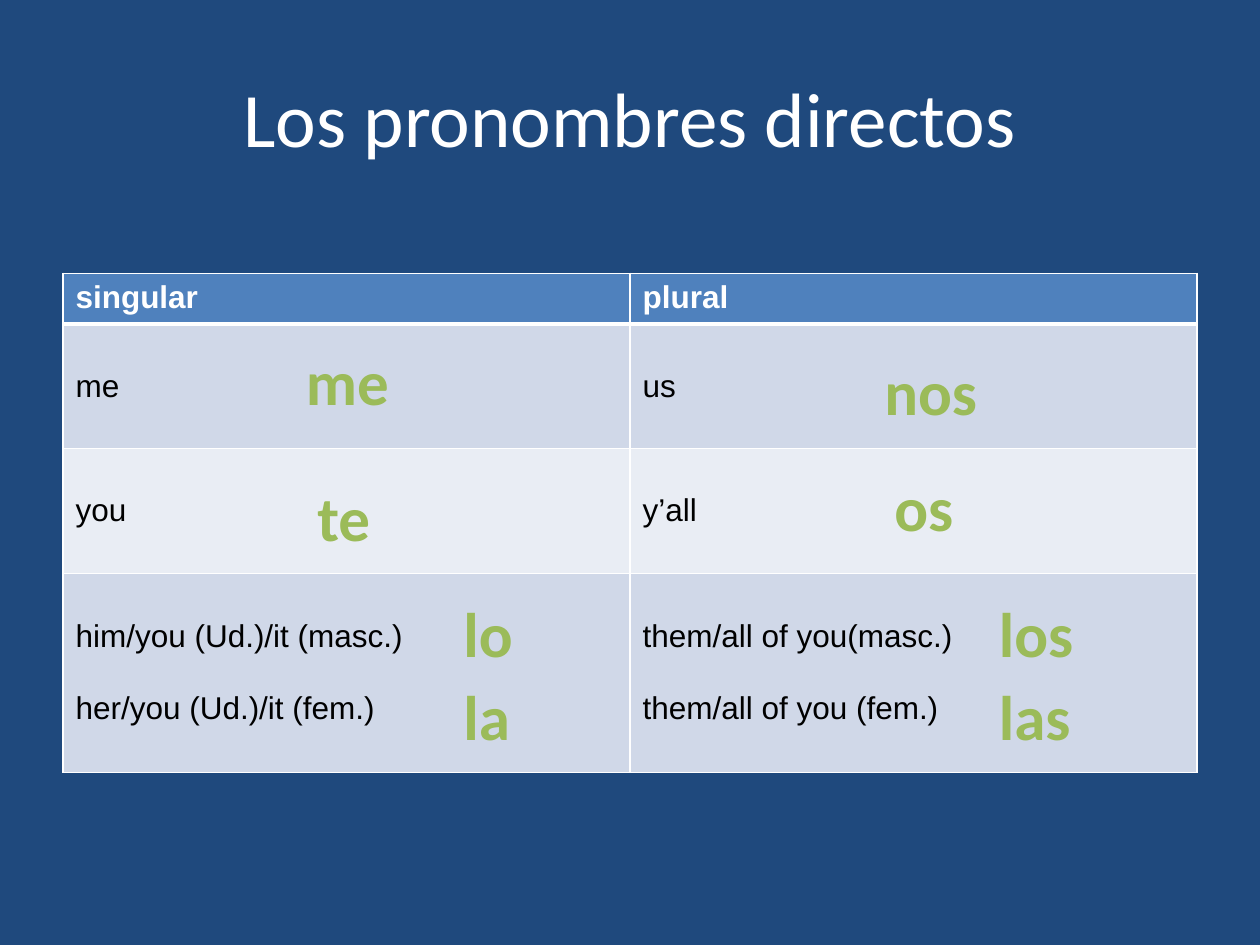
import pptx
import pptx.util
import pptx.dml.color
import pptx.enum.text
import pptx.oxml
import pptx.oxml.ns

Inches = pptx.util.Inches
Pt = pptx.util.Pt
RGB = pptx.dml.color.RGBColor.from_string
ANCHOR = pptx.enum.text.MSO_ANCHOR
ALIGN = pptx.enum.text.PP_ALIGN
AUTO = pptx.enum.text.MSO_AUTO_SIZE

THEME = {
    "background": "1F497D",
    "border": "FFFFFF",
    "header": "4F81BD",
    "bands": ["D0D8E8", "E9EDF4"],
    "title": {"name": "Calibri", "size": Pt(44), "color": "FFFFFF"},
    "heading": {"name": "Arial", "size": Pt(18), "bold": True, "color": "FFFFFF"},
    "body": {"name": "Arial", "size": Pt(18), "bold": False, "color": "000000"},
    "answer": {"name": "Calibri", "size": Pt(36), "bold": True, "color": "9BBB59"},
    "line_gap": Pt(21),
}


class SlideBuilder:
    def __init__(self, prs, theme):
        self.theme = theme
        self.slide = prs.slides.add_slide(prs.slide_layouts[6])
        fill = self.slide.background.fill
        fill.solid()
        fill.fore_color.rgb = RGB(theme["background"])

    def add_lines(self, tf, lines, style, align=ALIGN.LEFT):
        for i, line in enumerate(lines):
            p = tf.paragraphs[0] if i == 0 else tf.add_paragraph()
            p.alignment = align
            if i:
                p.space_before = self.theme["line_gap"]
            r = p.add_run()
            r.text = line
            for key, value in self.theme[style].items():
                if key == "color":
                    r.font.color.rgb = RGB(value)
                else:
                    setattr(r.font, key, value)

    def text(self, text, box, style, align=ALIGN.LEFT, **frame):
        sp = self.slide.shapes.add_textbox(*map(Inches, box))
        for key, value in frame.items():
            setattr(sp.text_frame, key, value)
        self.add_lines(sp.text_frame, [text], style, align)

    def border(self, cell, widths):
        tcPr = cell._tc.get_or_add_tcPr()
        for side, width in zip("LRTB", widths):
            tcPr.append(pptx.oxml.parse_xml(
                f'<a:ln{side} {pptx.oxml.ns.nsdecls("a")} w="{Pt(width)}"><a:solidFill>'
                f'<a:srgbClr val="{self.theme["border"]}"/></a:solidFill></a:ln{side}>'))

    def table(self, rows, left, top, col_width, heights):
        cols = len(rows[0])
        frame = self.slide.shapes.add_table(
            len(rows), cols, Inches(left), Inches(top),
            Inches(col_width * cols), Inches(sum(heights)))
        table = frame.table
        for col in table.columns:
            col.width = Inches(col_width)
        for i, (row, height) in enumerate(zip(rows, heights)):
            table.rows[i].height = Inches(height)
            color = self.theme["bands"][(i - 1) % 2] if i else self.theme["header"]
            for j, lines in enumerate(row):
                cell = table.cell(i, j)
                cell.vertical_anchor = ANCHOR.MIDDLE if i else ANCHOR.TOP
                self.border(cell, (1, 1, 3 if i == 1 else 1, 1 if i else 3))
                cell.fill.solid()
                cell.fill.fore_color.rgb = RGB(color)
                self.add_lines(cell.text_frame, lines, "body" if i else "heading")


def main():
    prs = pptx.Presentation()
    prs.slide_width, prs.slide_height = Inches(10), Inches(7.5)
    s = SlideBuilder(prs, THEME)
    s.text("Los pronombres directos", (0.5, 0.3, 9, 1.25), "title", ALIGN.CENTER,
           word_wrap=True, vertical_anchor=ANCHOR.MIDDLE)

    rows = [
        (["singular"], ["plural"]),
        (["me"], ["us"]),
        (["you"], ["y’all"]),
        (["him/you (Ud.)/it (masc.)", "her/you (Ud.)/it (fem.)"],
         ["them/all of you(masc.)", "them/all of you (fem.)"]),
    ]
    s.table(rows, 0.5, 2.17, 4.5, [0.4, 0.99, 0.99, 1.58])

    answers = [
        ("me", 2.33, 2.67, 0.87), ("te", 2.42, 3.75, 0.62),
        ("lo", 3.58, 4.67, 0.6), ("la", 3.58, 5.33, 0.57),
        ("nos", 6.92, 2.75, 0.95), ("os", 7, 3.67, 0.68),
        ("los", 7.83, 4.67, 0.8), ("las", 7.83, 5.33, 0.78),
    ]
    for pronoun, left, top, width in answers:
        s.text(pronoun, (left, top, width, 0.71), "answer",
               word_wrap=False, auto_size=AUTO.SHAPE_TO_FIT_TEXT)
    prs.save("out.pptx")


if __name__ == "__main__":
    main()
